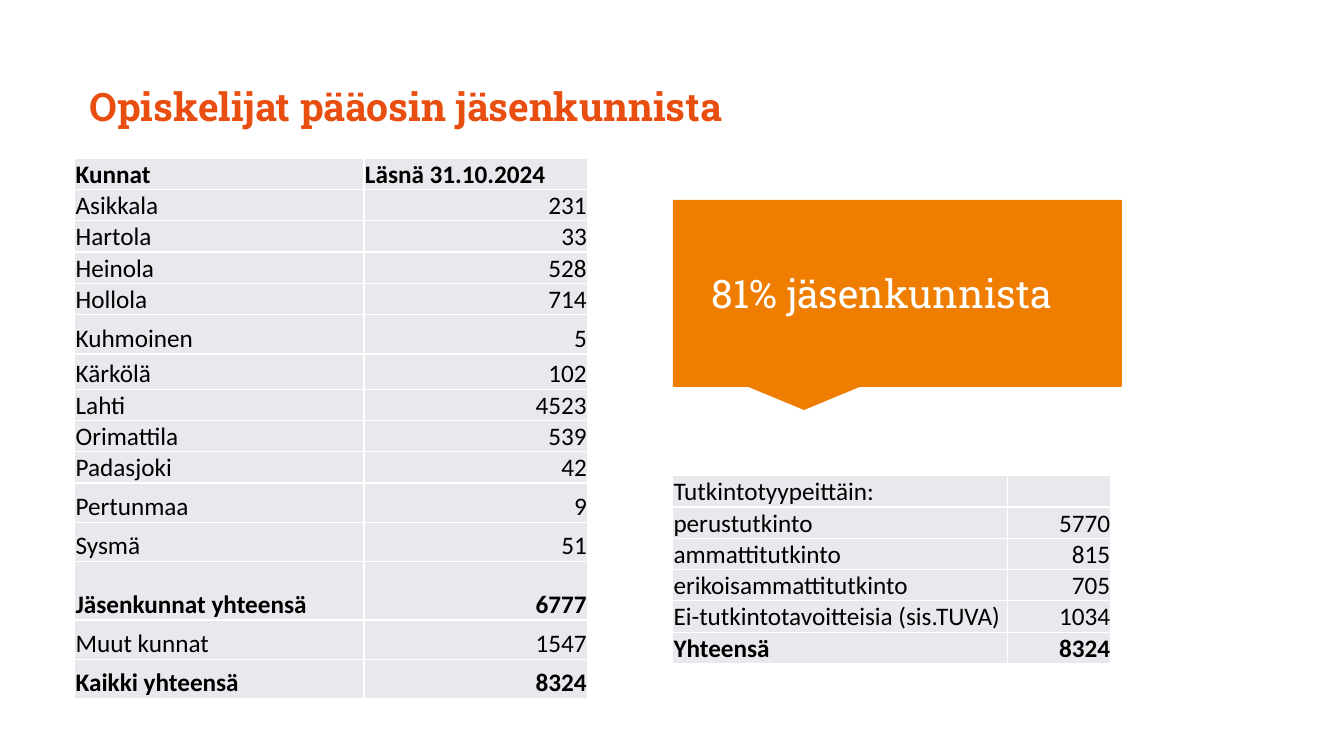
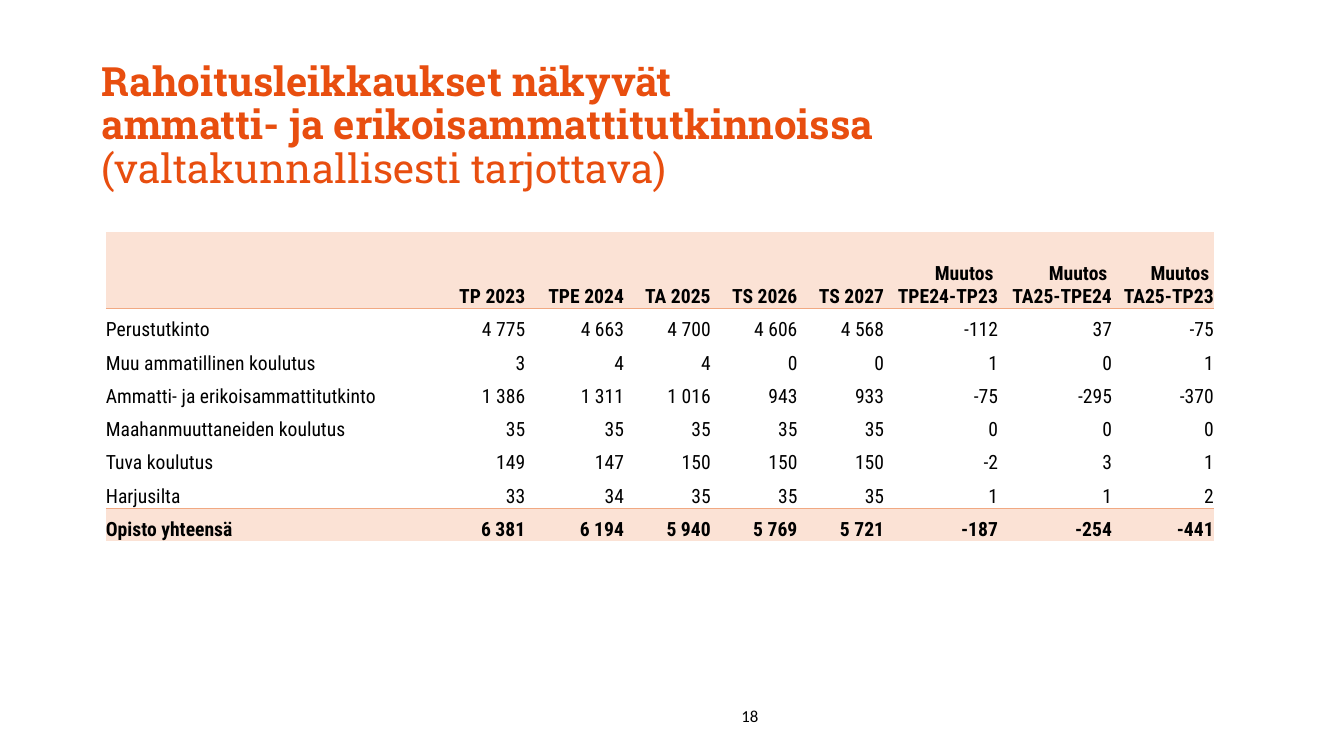
from dataclasses import dataclass

from lxml.etree import SubElement
from pptx import Presentation
from pptx.dml.color import RGBColor
from pptx.enum.shapes import MSO_SHAPE as Shape
from pptx.enum.text import MSO_ANCHOR as Anchor, PP_ALIGN as Align
from pptx.oxml.ns import qn
from pptx.util import Inches, Pt


@dataclass(frozen=True)
class Theme:
    title: str = "E84E0F"
    accent: str = "EF7D00"
    ink: str = "000000"
    white: str = "FFFFFF"
    grey: str = "E7E9ED"
    peach: str = "FBE2D5"
    rule: str = "F1A983"
    slab: str = "Roboto Slab"
    plain: str = "Calibri"
    narrow: str = "Roboto Condensed"
    head: float = 28
    large: float = 28.8
    body: float = 18
    small: float = 14
    note: float = 12


@dataclass(frozen=True)
class Look:
    """Style of one kind of table; ruled lists the rows with a line below."""
    font: str
    size: float
    fill: str
    line: str
    width: float
    inset: float = 0
    ruled: tuple = None


T = Theme()
GREY = Look(T.plain, T.body, T.grey, T.white, 1, inset=0.01)
PEACH = Look(T.narrow, T.small, T.peach, T.rule, 0.5, ruled=(0, 6))


class Deck:
    def __init__(self):
        self.prs = Presentation()
        self.prs.slide_width = Inches(13.33)
        self.prs.slide_height = Inches(7.5)

    def page(self):
        self.shapes = self.prs.slides.add_slide(self.prs.slide_layouts[6]).shapes

    def style(self, para, font, size, color, bold=False, align=Align.LEFT):
        para.alignment = align
        para.font.name = font
        para.font.size = Pt(size)
        para.font.bold = bold
        para.font.color.rgb = RGBColor.from_string(color)

    def text(self, box, words, *args, **opts):
        """Put one styled paragraph in the box at the given place."""
        frame = self.shapes.add_textbox(*map(Inches, box)).text_frame
        frame.word_wrap = True
        frame.vertical_anchor = Anchor.MIDDLE
        para = frame.paragraphs[0]
        para.text = words
        self.style(para, *args, **opts)
        return para

    def title(self, box, words, size=T.head, light=None):
        para = self.text(box, words, T.slab, size, T.title, bold=True)
        para.line_spacing = 0.9
        if light:
            para.add_line_break()
            run = para.add_run()
            run.text = light
            run.font.bold = False

    def number(self, value):
        self.text((4.62, 6.9, 3, 0.4), str(value), T.plain, T.note, T.ink,
                  align=Align.RIGHT)

    def callout(self, box, words):
        shape = self.shapes.add_shape(Shape.RECTANGULAR_CALLOUT, *map(Inches, box))
        shape.shadow.inherit = False
        shape.fill.solid()
        shape.fill.fore_color.rgb = RGBColor.from_string(T.accent)
        shape.line.color.rgb = RGBColor.from_string(T.accent)
        shape.line.width = Pt(1)
        frame = shape.text_frame
        frame.word_wrap = True
        frame.margin_left = Inches(0.38)
        frame.vertical_anchor = Anchor.MIDDLE
        frame.text = words
        self.style(frame.paragraphs[0], T.slab, T.head, T.white)

    def edge(self, cell, side, look, shown):
        line = SubElement(cell._tc.get_or_add_tcPr(), qn(f"a:ln{side}"),
                          w=str(Pt(look.width)))
        if shown:
            fill = SubElement(line, qn("a:solidFill"))
            SubElement(fill, qn("a:srgbClr"), val=look.line)
        else:
            SubElement(line, qn("a:noFill"))

    def cell(self, cell, words, look, bold, filled, align, lines):
        cell.margin_left = cell.margin_right = cell.margin_top = Inches(look.inset)
        cell.margin_bottom = 0
        cell.vertical_anchor = Anchor.BOTTOM
        for side in "LRTB":
            self.edge(cell, side, look, side in lines)
        if filled:
            cell.fill.solid()
            cell.fill.fore_color.rgb = RGBColor.from_string(look.fill)
        else:
            cell.fill.background()
        cell.text = words
        self.style(cell.text_frame.paragraphs[0], look.font, look.size, T.ink,
                   bold, align)

    def table(self, spot, cols, rows, data, look, bold):
        """Draw a table; ruled looks fill only the bold rows."""
        size = sum(cols), sum(rows)
        table = self.shapes.add_table(len(rows), len(cols),
                                      *map(Inches, (*spot, *size))).table
        table.first_row = table.horz_banding = False
        for col, width in zip(table.columns, cols):
            col.width = Inches(width)
        for row, height in zip(table.rows, rows):
            row.height = Inches(height)
        full = look.ruled is None
        for r, row in enumerate(data):
            lines = "LRTB" if full else (
                "T" * (r - 1 in look.ruled) + "B" * (r in look.ruled))
            for c, words in enumerate(row):
                left = c == 0 or (full and r == 0)
                self.cell(table.cell(r, c), words, look, r in bold,
                          full or r in bold, Align.LEFT if left else Align.RIGHT,
                          lines)


TOWNS = [
    ("Kunnat", "Läsnä 31.10.2024"),
    ("Asikkala", "231"),
    ("Hartola", "33"),
    ("Heinola", "528"),
    ("Hollola", "714"),
    ("Kuhmoinen", "5"),
    ("Kärkölä", "102"),
    ("Lahti", "4523"),
    ("Orimattila", "539"),
    ("Padasjoki", "42"),
    ("Pertunmaa", "9"),
    ("Sysmä", "51"),
    ("Jäsenkunnat yhteensä", "6777"),
    ("Muut kunnat", "1547"),
    ("Kaikki yhteensä", "8324"),
]
LEVELS = [
    ("Tutkintotyypeittäin:", ""),
    ("perustutkinto", "5770"),
    ("ammattitutkinto", "815"),
    ("erikoisammattitutkinto", "705"),
    ("Ei-tutkintotavoitteisia (sis.TUVA)", "1034"),
    ("Yhteensä", "8324"),
]
FUNDS = [
    ("", "TP 2023", "TPE 2024", "TA 2025", "TS 2026", "TS 2027",
     "Muutos \vTPE24-TP23", "Muutos \vTA25-TPE24", "Muutos \vTA25-TP23"),
    ("Perustutkinto", "4 775", "4 663", "4 700", "4 606", "4 568",
     "-112", "37", "-75"),
    ("Muu ammatillinen koulutus", "3", "4", "4", "0", "0", "1", "0", "1"),
    ("Ammatti- ja erikoisammattitutkinto", "1 386", "1 311", "1 016", "943", "933",
     "-75", "-295", "-370"),
    ("Maahanmuuttaneiden koulutus", "35", "35", "35", "35", "35", "0", "0", "0"),
    ("Tuva koulutus", "149", "147", "150", "150", "150", "-2", "3", "1"),
    ("Harjusilta", "33", "34", "35", "35", "35", "1", "1", "2"),
    ("Opisto yhteensä", "6 381", "6 194", "5 940", "5 769", "5 721",
     "-187", "-254", "-441"),
]


def towns(deck):
    deck.page()
    deck.title((0.79, 0.59, 10.09, 0.98), "Opiskelijat pääosin jäsenkunnista")
    deck.callout((6.68, 1.99, 4.44, 1.84), "81% jäsenkunnista")
    low, high = 0.31, 0.39
    rows = [low] * 5 + [high, 0.35] + [low] * 3 + [high] * 2 + [0.58] + [high] * 2
    deck.table((0.74, 1.57), (2.87, 2.22), rows, TOWNS, GREY, bold=(0, 12, 14))
    deck.table((6.67, 4.72), (3.32, 1.03), [low] * 6, LEVELS, GREY, bold=(5,))


def funds(deck):
    deck.page()
    deck.title((0.91, 0.58, 12.15, 1.35),
               "Rahoitusleikkaukset näkyvät\vammatti- ja erikoisammattitutkinnoissa",
               T.large, light="(valtakunnallisesti tarjottava)")
    deck.number(18)
    cols = (3.3, 0.86, 0.98, 0.86, 0.86, 0.86, 1.13, 1.13, 1.01)
    deck.table((1.05, 2.3), cols, [0.76] + [0.33] * 7, FUNDS, PEACH, bold=(0, 7))


def main():
    deck = Deck()
    towns(deck)
    funds(deck)
    deck.prs.save("out.pptx")


if __name__ == "__main__":
    main()
